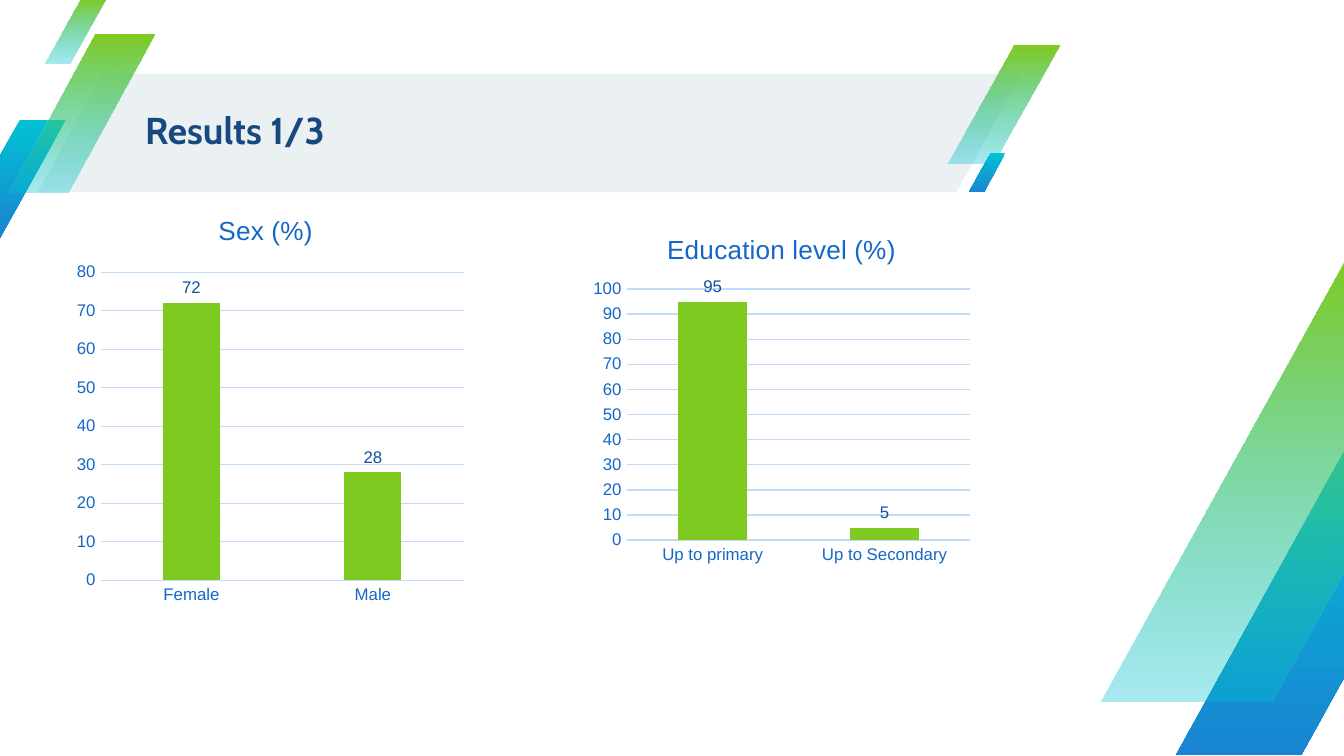
from lxml import etree
from pptx import Presentation
from pptx.chart.data import CategoryChartData
from pptx.dml.color import RGBColor
from pptx.enum.chart import XL_CHART_TYPE, XL_LABEL_POSITION, XL_TICK_MARK
from pptx.enum.shapes import MSO_SHAPE
from pptx.enum.text import MSO_ANCHOR, MSO_AUTO_SIZE, PP_ALIGN
from pptx.oxml import parse_xml
from pptx.oxml.ns import nsdecls, qn
from pptx.util import Inches, Pt

PARALLELOGRAM = MSO_SHAPE.PARALLELOGRAM
COLUMNS = XL_CHART_TYPE.COLUMN_CLUSTERED
OUTSIDE_END = XL_LABEL_POSITION.OUTSIDE_END
NO_TICK = XL_TICK_MARK.NONE
MIDDLE = MSO_ANCHOR.MIDDLE
LEFT = PP_ALIGN.LEFT
NO_AUTO_SIZE = MSO_AUTO_SIZE.NONE

GREEN, TEAL, BLUE = "7FCA20", "02C1D3", "1985D2"
BAND, NAVY = "EBF0F3", "184880"
AXIS_TEXT, LABEL_TEXT, GRID = "1567C7", "10529F", "C2DBF9"

# left, top, width, height, top colour, bottom colour, bottom opacity in percent
GREEN_FADE = (GREEN, TEAL, 34)
BLUE_FADE = (TEAL, BLUE, 100)
STRIPES = [
    (-0.34, 0.89, 0.83, 0.88, *BLUE_FADE),
    (7.05, 0.34, 0.83, 0.88, *GREEN_FADE),
    (0.06, 0.26, 1.09, 1.17, *GREEN_FADE),
    (0.33, -0.02, 0.46, 0.49, *GREEN_FADE),
    (7.21, 1.14, 0.27, 0.29, *BLUE_FADE),
    (8.75, 3.2, 2.27, 2.42, *BLUE_FADE),
    (8.19, 1.92, 3.1, 3.3, *GREEN_FADE),
]


def rgb(value):
    return RGBColor.from_string(value)


def format_font(font, size, color, name="Arial", bold=False):
    font.size = Pt(size)
    font.color.rgb = rgb(color)
    font.name = name
    font.bold = bold


def add_parallelogram(slide, left, top, width, height, slant):
    shape = slide.shapes.add_shape(
        PARALLELOGRAM, Inches(left), Inches(top), Inches(width), Inches(height))
    shape.adjustments[0] = slant
    shape.shadow.inherit = False
    shape.line.fill.background()
    return shape


def add_band(slide):
    band = add_parallelogram(slide, 0.28, 0.55, 7.32, 0.88, 0.55)
    band.fill.solid()
    band.fill.fore_color.rgb = rgb(BAND)


def add_stripe(slide, left, top, width, height, top_color, bottom_color, opacity):
    stripe = add_parallelogram(slide, left, top, width, height, 0.59)
    stripe.fill.gradient()
    stripe.fill.gradient_angle = 270
    for stop, color in zip(stripe.fill.gradient_stops, (top_color, bottom_color)):
        stop.color.rgb = rgb(color)
    if opacity < 100:
        last_color = list(stripe._element.iter(qn("a:srgbClr")))[-1]
        etree.SubElement(last_color, qn("a:alpha"), val=str(opacity * 1000))


def format_title(slide, text):
    title = slide.shapes.title
    title.left, title.top = Inches(1), Inches(0.54)
    title.width, title.height = Inches(6.59), Inches(0.89)
    slide.shapes._spTree.append(title._element)  # in front of the band
    frame = title.text_frame
    frame.text = text
    frame.auto_size = NO_AUTO_SIZE
    frame.vertical_anchor = MIDDLE
    frame.margin_left = Inches(0.08)
    frame.margin_top = frame.margin_right = frame.margin_bottom = 0
    paragraph = frame.paragraphs[0]
    paragraph.alignment = LEFT
    paragraph.line_spacing = 0.9
    format_font(paragraph.runs[0].font, 20, NAVY, "Cabin", True)


def set_layout(element, left, top, size=None):
    """Place a chart title or plot area by fractions of the chart."""
    values = [("xMode", "edge"), ("yMode", "edge"), ("x", left), ("y", top)]
    if size:
        values.insert(0, ("layoutTarget", "inner"))
        values += [("w", size[0]), ("h", size[1])]
    items = "".join(f'<c:{tag} val="{value}"/>' for tag, value in values)
    layout = parse_xml(f'<c:layout {nsdecls("c")}><c:manualLayout>{items}'
                       "</c:manualLayout></c:layout>")
    for old in element.findall(qn("c:layout")):
        element.remove(old)
    text = element.find(qn("c:tx"))
    if text is None:
        element.insert(0, layout)
    else:
        text.addnext(layout)


def format_axis(axis):
    axis.major_tick_mark = axis.minor_tick_mark = NO_TICK
    axis.format.line.fill.background()
    format_font(axis.tick_labels.font, 9, AXIS_TEXT)


def format_line(line):
    line.color.rgb = rgb(GRID)
    line.width = Pt(0.75)


def add_column_chart(slide, box, title, categories, values, maximum, gap,
                     overlap, title_at, plot_at, plot_size):
    data = CategoryChartData(number_format="0")
    data.categories = categories
    data.add_series("Series 1", values)
    chart = slide.shapes.add_chart(COLUMNS, *map(Inches, box), data).chart
    format_font(chart.font, 10, "061E3A")
    chart.has_legend = False

    chart.has_title = True
    title_frame = chart.chart_title.text_frame
    title_frame.text = title
    format_font(title_frame.paragraphs[0].runs[0].font, 14, AXIS_TEXT)
    set_layout(chart.chart_title._element, *title_at)
    set_layout(chart._chartSpace.chart.plotArea, *plot_at, plot_size)

    format_axis(chart.category_axis)
    value_axis = chart.value_axis
    format_axis(value_axis)
    value_axis.minimum_scale, value_axis.maximum_scale = 0, maximum
    value_axis.major_unit = 10
    format_line(value_axis.major_gridlines.format.line)

    plot = chart.plots[0]
    plot.vary_by_categories = False
    plot.gap_width, plot.overlap = gap, overlap
    series = plot.series[0]
    series.format.fill.solid()
    series.format.fill.fore_color.rgb = rgb(GREEN)
    labels = series.data_labels
    labels.show_value = True
    labels.position = OUTSIDE_END
    labels.number_format, labels.number_format_is_linked = "0", False
    format_font(labels.font, 9, LABEL_TEXT)
    return chart


def main():
    presentation = Presentation()
    presentation.slide_width = Inches(10)
    presentation.slide_height = Inches(10) * 9 // 16
    slide = presentation.slides.add_slide(presentation.slide_layouts[5])
    add_band(slide)
    for stripe in STRIPES:
        add_stripe(slide, *stripe)
    format_title(slide, "Results 1/3")
    sex_chart = add_column_chart(
        slide, (0.51, 1.43, 3, 3.14), "Sex (%)", ["Female", "Male"], [72, 28],
        80, 219, -27, (0.36, 0.04), (0.08, 0.19), (0.9, 0.73))
    format_line(sex_chart.category_axis.format.line)
    add_column_chart(
        slide, (4.34, 1.59, 2.94, 2.67), "Education level (%)",
        ["Up to primary", "Up to Secondary"], [95, 5],
        100, 150, 0, (0.2, 0.04), (0.11, 0.21), (0.87, 0.7))
    presentation.save("out.pptx")


if __name__ == "__main__":
    main()
